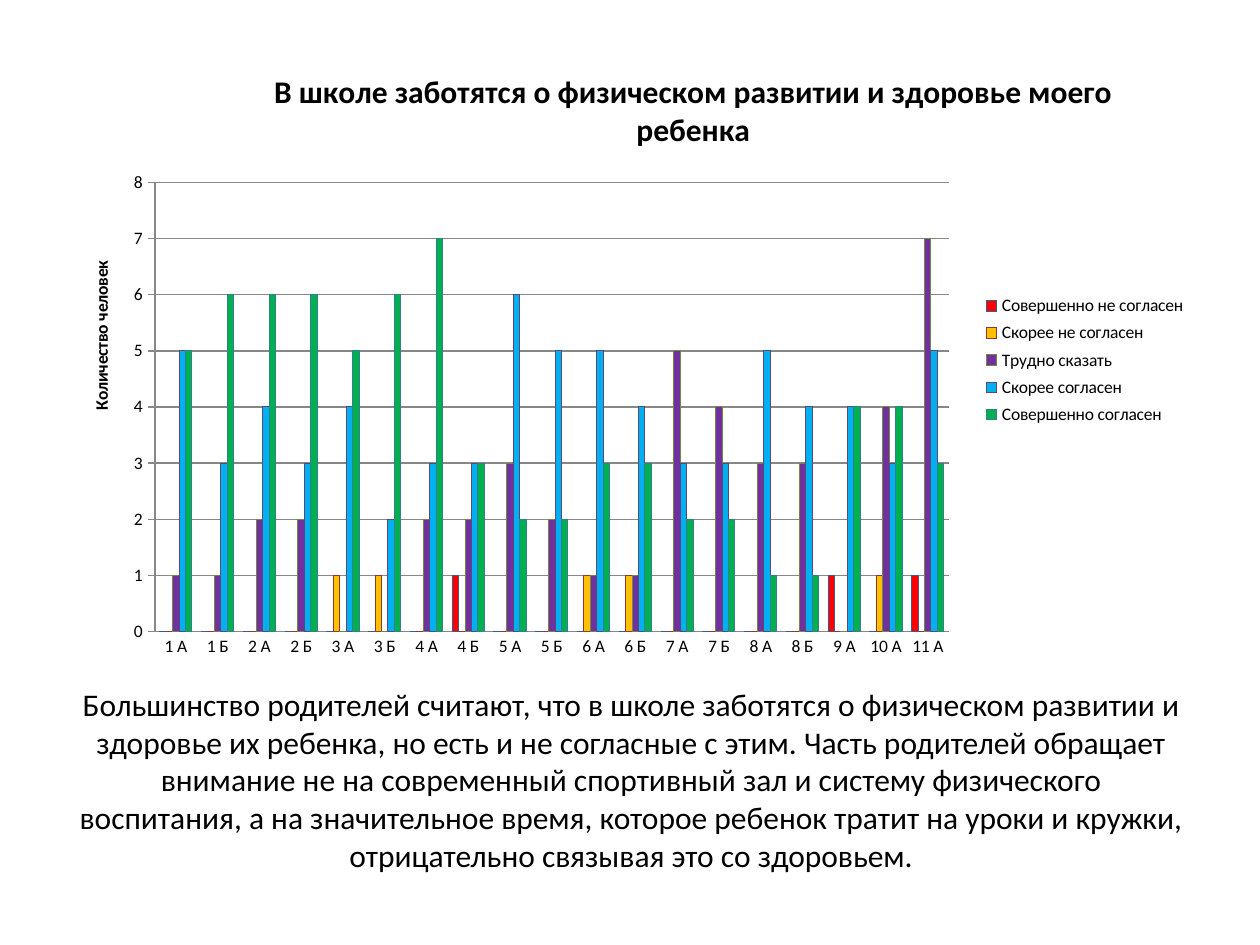
from dataclasses import dataclass
from typing import Any

from lxml.etree import SubElement
from pptx import Presentation
from pptx.chart.data import CategoryChartData
from pptx.dml.color import RGBColor
from pptx.enum.chart import XL_CHART_TYPE as ChartType
from pptx.enum.chart import XL_LEGEND_POSITION as LegendPosition
from pptx.enum.chart import XL_TICK_MARK as TickMark
from pptx.enum.text import MSO_ANCHOR, PP_ALIGN
from pptx.oxml.ns import qn
from pptx.util import Inches, Pt

QUESTION = "В школе заботятся о физическом развитии и здоровье моего ребенка"
CONCLUSION = (
    "Большинство родителей считают, что в школе заботятся о физическом развитии "
    "и здоровье их ребенка, но есть и не согласные с этим. Часть родителей обращает "
    "внимание не на современный спортивный зал и систему физического воспитания, "
    "а на значительное время, которое ребенок тратит на уроки и кружки, "
    "отрицательно связывая это со здоровьем."
)
CLASSES = [f"{grade} {letter}" for grade in range(1, 9) for letter in "АБ"]
CLASSES += ["9 А", "10 А", "11 А"]


@dataclass
class Answer:
    name: str
    fill: str
    outline: str
    votes: list[int]


ANSWERS = [
    Answer("Совершенно не согласен", "FF0000", "385D8A",
           [0, 0, 0, 0, 0, 0, 0, 1, 0, 0, 0, 0, 0, 0, 0, 0, 1, 0, 1]),
    Answer("Скорее не согласен", "FFC000", "8C3836",
           [0, 0, 0, 0, 1, 1, 0, 0, 0, 0, 1, 1, 0, 0, 0, 0, 0, 1, 0]),
    Answer("Трудно сказать", "7030A0", "71893F",
           [1, 1, 2, 2, 0, 0, 2, 2, 3, 2, 1, 1, 5, 4, 3, 3, 0, 4, 7]),
    Answer("Скорее согласен", "00B0F0", "5C4776",
           [5, 3, 4, 3, 4, 2, 3, 3, 6, 5, 5, 4, 3, 3, 5, 4, 4, 3, 5]),
    Answer("Совершенно согласен", "00B050", "357D91",
           [5, 6, 6, 6, 5, 6, 7, 3, 2, 2, 3, 3, 2, 2, 1, 1, 4, 4, 3]),
]


def color(value: str) -> RGBColor:
    return RGBColor.from_string(value)


def apply(target: Any, formats: dict[str, Any]) -> None:
    for name, value in formats.items():
        setattr(target, name, value)


def style_font(font: Any, size: float, bold: bool = False) -> None:
    apply(font, {"name": "Calibri", "size": Pt(size), "bold": bold})
    font.color.rgb = color("000000")


def place(part: Any, index: int, **fractions: float) -> None:
    layout = part.find(qn("c:layout"))
    if layout is None:
        layout = part.makeelement(qn("c:layout"))
        part.insert(index, layout)
    for child in list(layout):
        layout.remove(child)
    manual = SubElement(layout, qn("c:manualLayout"))
    if part.tag == qn("c:plotArea"):
        SubElement(manual, qn("c:layoutTarget")).set("val", "inner")
    for mode in ("xMode", "yMode"):
        SubElement(manual, qn(f"c:{mode}")).set("val", "edge")
    for name, value in fractions.items():
        SubElement(manual, qn(f"c:{name}")).set("val", str(value))


def write_title(title: Any, text: str, size: float, x: float, y: float) -> None:
    paragraph = title.text_frame.paragraphs[0]
    run = paragraph.add_run()
    run.text = text
    style_font(run.font, size, True)
    place(title._element, 1, x=x, y=y)


def style_axis(axis: Any, formats: dict[str, Any]) -> None:
    apply(axis, formats)
    style_font(axis.tick_labels.font, 10)
    axis.format.line.color.rgb = color("878787")


def add_survey_chart(slide: Any) -> None:
    data = CategoryChartData()
    data.categories = CLASSES
    for answer in ANSWERS:
        data.add_series(answer.name, answer.votes)
    chart = slide.shapes.add_chart(
        ChartType.COLUMN_CLUSTERED, Inches(0.51), Inches(0.36), Inches(9), Inches(4.95), data
    ).chart
    style_font(chart.font, 10)
    apply(chart, {"has_title": True, "has_legend": True})
    write_title(chart.chart_title, QUESTION, 18, 0.18, 0.03)

    apply(chart.legend, {"position": LegendPosition.RIGHT, "include_in_layout": False})
    style_font(chart.legend.font, 10)
    place(chart.legend._element, 1, x=0.8, y=0.39, w=0.2, h=0.23)
    place(chart._chartSpace.chart.plotArea, 0, x=0.08, y=0.22, w=0.7, h=0.72)

    style_axis(chart.category_axis, {
        "major_tick_mark": TickMark.NONE, "minor_tick_mark": TickMark.NONE,
    })
    people = chart.value_axis
    style_axis(people, {
        "major_tick_mark": TickMark.OUTSIDE, "minor_tick_mark": TickMark.NONE,
        "minimum_scale": 0, "maximum_scale": 8, "major_unit": 1,
        "has_major_gridlines": True, "has_title": True,
    })
    people.major_gridlines.format.line.color.rgb = color("878787")
    write_title(people.axis_title, "Количество человек", 10, 0.02, 0.34)

    apply(chart.plots[0], {"gap_width": 150, "overlap": 0, "vary_by_categories": False})
    for series, answer in zip(chart.plots[0].series, ANSWERS):
        series.format.fill.solid()
        series.format.fill.fore_color.rgb = color(answer.fill)
        series.format.line.color.rgb = color(answer.outline)


def add_conclusion(slide: Any) -> None:
    box = slide.shapes.add_textbox(Inches(0.51), Inches(5.56), Inches(9), Inches(1.25))
    apply(box.text_frame, {"word_wrap": True, "vertical_anchor": MSO_ANCHOR.MIDDLE})
    paragraph = box.text_frame.paragraphs[0]
    paragraph.alignment = PP_ALIGN.CENTER
    run = paragraph.add_run()
    run.text = CONCLUSION
    style_font(run.font, 18)


def main() -> None:
    presentation = Presentation()
    apply(presentation, {"slide_width": Inches(10), "slide_height": Inches(7.5)})
    slide = presentation.slides.add_slide(presentation.slide_layouts[6])
    add_conclusion(slide)
    add_survey_chart(slide)
    presentation.save("out.pptx")


if __name__ == "__main__":
    main()
